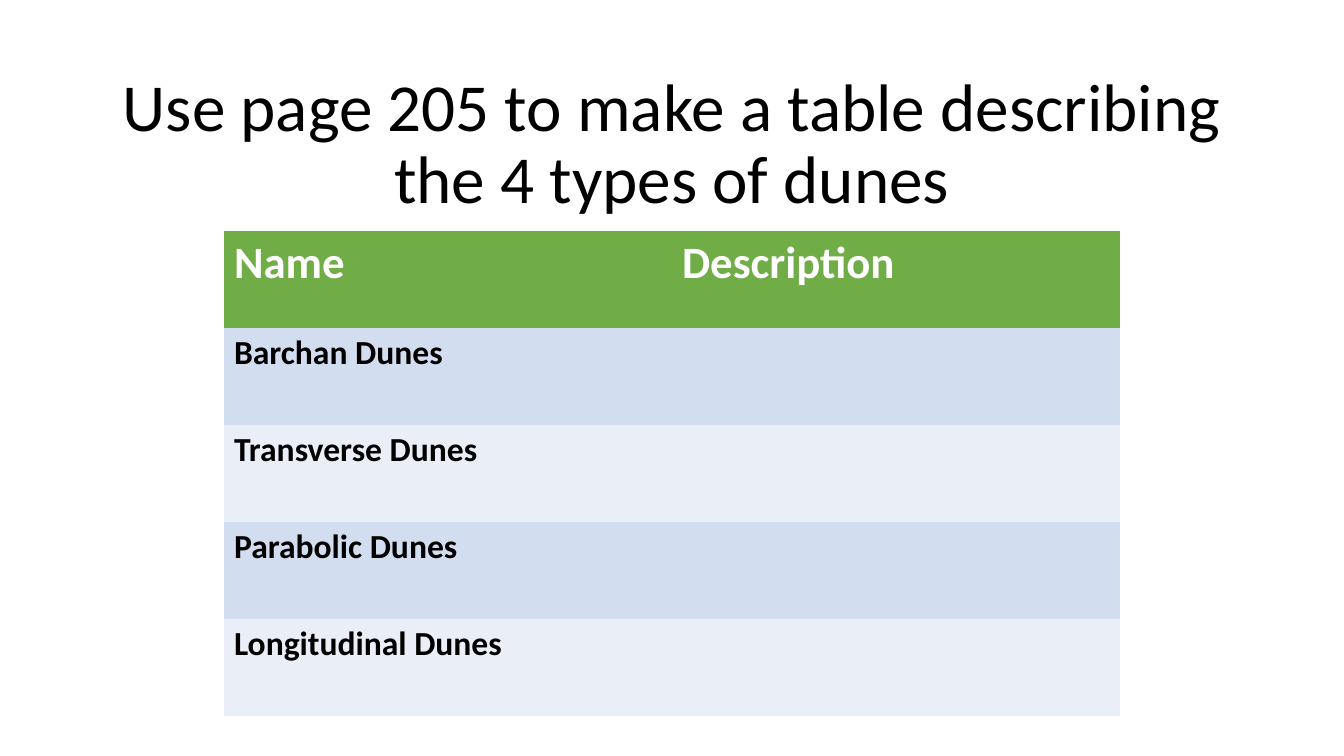
from pptx import Presentation
from pptx.dml.color import RGBColor
from pptx.enum.text import MSO_ANCHOR, PP_ALIGN
from pptx.oxml.ns import qn
from pptx.util import Pt

WHITE = RGBColor(0xFF, 0xFF, 0xFF)
BLACK = RGBColor(0, 0, 0)
GREEN = RGBColor(0x70, 0xAD, 0x47)
BLUE = RGBColor(0xD2, 0xDE, 0xEF)
PALE = RGBColor(0xEA, 0xEF, 0xF7)
PLAIN_STYLE = "{2D5ABB26-0587-4C30-8999-92F81FD0307C}"

TITLE = "Use page 205 to make a table describing the 4 types of dunes"
ROWS = [
    ("Name", "Description"),
    ("Barchan Dunes", ""),
    ("Transverse Dunes", ""),
    ("Parabolic Dunes", ""),
    ("Longitudinal Dunes", ""),
]
TITLE_FORMAT = {"name": "Calibri", "size": Pt(48), "bold": False}
HEAD_FORMAT = {"name": "Calibri", "size": Pt(32), "bold": True}
NAME_FORMAT = {"name": "Calibri", "size": Pt(24), "bold": True}


def write(para, text, formats, color):
    """Add one formatted span to a paragraph."""
    span = para.add_run()
    span.text = text
    for name, value in formats.items():
        setattr(span.font, name, value)
    span.font.color.rgb = color


def place_title(page, left, top, width, height):
    """Place the centred heading in the title placeholder."""
    title = page.shapes.title
    title.left, title.top, title.width, title.height = left, top, width, height
    frame = title.text_frame
    frame.word_wrap = True
    frame.vertical_anchor = MSO_ANCHOR.MIDDLE
    para = frame.paragraphs[0]
    para.alignment = PP_ALIGN.CENTER
    para.line_spacing = 0.9
    write(para, TITLE, TITLE_FORMAT, BLACK)


def place_dune_table(page, left, top, width, height):
    """Place the table of dune types with a green head and banded rows."""
    shape = page.shapes.add_table(len(ROWS), len(ROWS[0]), left, top, width, height)
    table = shape.table
    style = table._tbl.tblPr.find(qn("a:tableStyleId"))
    style.text = PLAIN_STYLE
    for row, texts in enumerate(ROWS):
        head = row == 0
        fill = GREEN if head else (PALE, BLUE)[row % 2]
        for column, text in enumerate(texts):
            cell = table.cell(row, column)
            cell.fill.solid()
            cell.fill.fore_color.rgb = fill
            if text:
                formats = HEAD_FORMAT if head else NAME_FORMAT
                color = WHITE if head else BLACK
                write(cell.text_frame.paragraphs[0], text, formats, color)


def main():
    """Build and save the deck."""
    deck = Presentation()
    deck.slide_width, deck.slide_height = Pt(960), Pt(540)
    page = deck.slides.add_slide(deck.slide_layouts[5])
    place_title(page, Pt(66), Pt(28.75), Pt(828), Pt(151))
    place_dune_table(page, Pt(160), Pt(165), Pt(640), Pt(346.5))
    deck.save("out.pptx")


if __name__ == "__main__":
    main()
